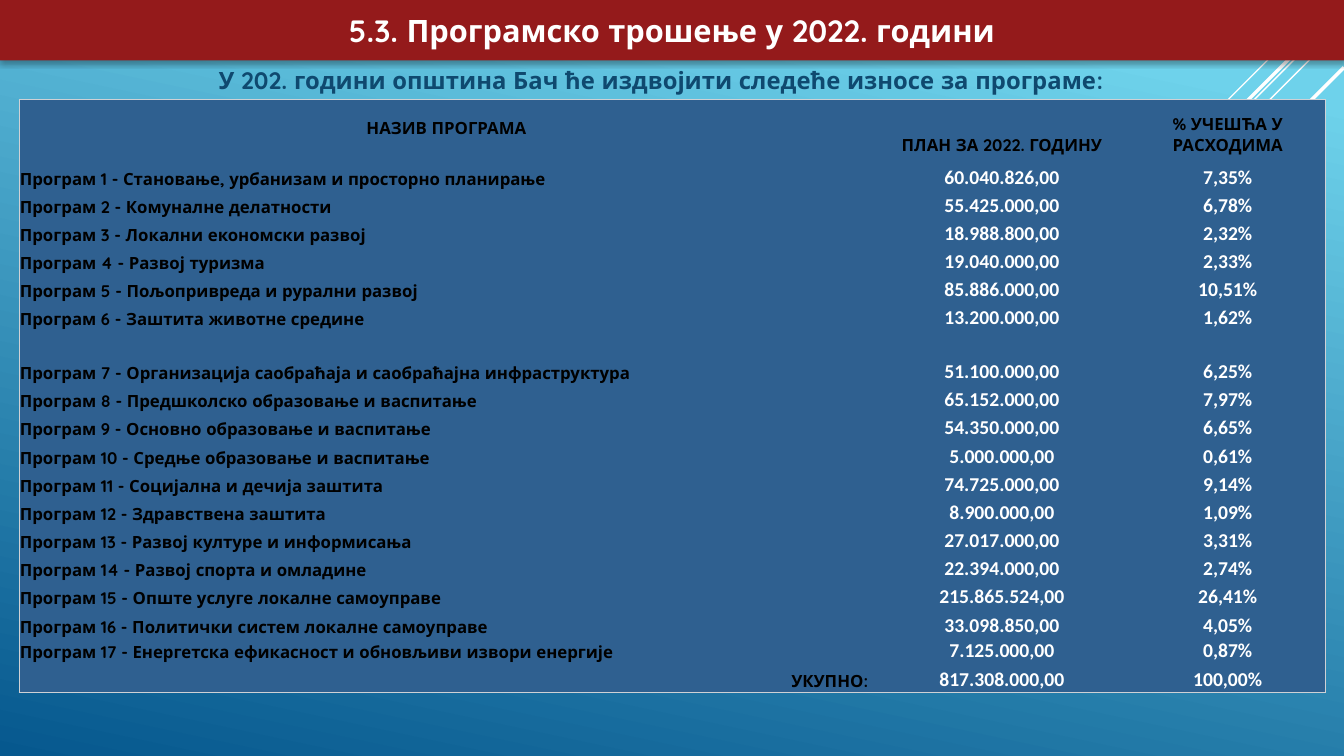
from dataclasses import dataclass

from lxml.etree import SubElement
from pptx import Presentation
from pptx.dml.color import RGBColor
from pptx.enum.shapes import MSO_CONNECTOR
from pptx.enum.text import MSO_ANCHOR, PP_ALIGN
from pptx.oxml import parse_xml
from pptx.oxml.ns import nsdecls, qn
from pptx.util import Cm, Pt


@dataclass(frozen=True)
class Theme:
    sky: str = "6ED2EB"
    deep: str = "06588E"
    banner: str = "941A1B"
    subtitle: str = "0F496F"
    table: str = "2F6090"
    border: str = "CFD1D5"
    light: str = "FFFFFF"
    dark: str = "000000"
    heading_font: str = "Quicksand"
    number_font: str = "Calibri"
    title_size: int = 22
    subtitle_size: int = 17
    label_size: int = 12
    number_size: int = 14


theme = Theme()


def write(frame, text, align, font, size, color):
    para = frame.paragraphs[0]
    para.alignment = align
    span = para.add_run()
    span.text = text
    span.font.name = font
    span.font.size = Pt(size)
    span.font.bold = True
    span.font.color.rgb = RGBColor.from_string(color)


def add_border(cell, side):
    cell.fill.background()
    properties = cell._tc.get_or_add_tcPr()
    border = parse_xml(
        f'<a:ln{side} {nsdecls("a")} w="9525"><a:solidFill><a:srgbClr val="{theme.border}">'
        f'<a:alpha val="60000"/></a:srgbClr></a:solidFill><a:prstDash val="solid"/></a:ln{side}>'
    )
    properties.insert(len(properties) - 1, border)


deck = Presentation()
deck.slide_width = Cm(33.87)
deck.slide_height = Cm(19.05)
page = deck.slides.add_slide(deck.slide_layouts[5])

backdrop = page.background.fill
backdrop.gradient()
backdrop.gradient_angle = 258
for stop, position, color in zip(backdrop.gradient_stops, (0.1, 1), (theme.sky, theme.deep)):
    stop.position = position
    stop.color.rgb = RGBColor.from_string(color)

rays = [
    (33.43, 0.03, 10.57, 1),
    (33.87, 0.25, 16.89, 1),
    (33.87, 0.64, 13.77, 1),
    (33.87, 0.1, 13.46, 2.5),
    (33.87, 1.7, 12.07, 2.5),
]
for x, y, reach, weight in rays:
    ray = page.shapes.add_connector(
        MSO_CONNECTOR.STRAIGHT, Cm(x), Cm(y), Cm(x - reach), Cm(y + reach)
    )
    ray.line.color.rgb = RGBColor.from_string(theme.light)
    ray.line.width = Pt(weight)
    SubElement(ray.element.spPr, qn("a:effectLst"))

subtitle = page.shapes.add_textbox(Cm(4.27), Cm(1.52), Cm(24.77), Cm(1.4))
subtitle.text_frame.word_wrap = True
write(
    subtitle.text_frame, "У 202. години општина Бач ће издвојити следеће износе за програме:",
    PP_ALIGN.CENTER, theme.heading_font, theme.subtitle_size, theme.subtitle,
)

banner = page.shapes.title
banner.left, banner.top, banner.width, banner.height = Cm(0), Cm(0), Cm(33.87), Cm(1.52)
banner.element.spPr.append(
    parse_xml(f'<a:prstGeom {nsdecls("a")} prst="roundRect"><a:avLst/></a:prstGeom>')
)
banner.fill.solid()
banner.fill.fore_color.rgb = RGBColor.from_string(theme.banner)
banner.line.fill.background()
banner.element.spPr.append(parse_xml(
    f'<a:effectLst {nsdecls("a")}><a:outerShdw blurRad="44450" dist="27940" dir="5400000" '
    f'rotWithShape="0"><a:srgbClr val="{theme.dark}"><a:alpha val="32000"/></a:srgbClr>'
    '</a:outerShdw></a:effectLst>'
))
banner.text_frame.vertical_anchor = MSO_ANCHOR.MIDDLE
write(
    banner.text_frame, "5.3. Програмско трошење у 2022. години",
    PP_ALIGN.CENTER, theme.heading_font, theme.title_size, theme.light,
)
banner.element.getparent().append(banner.element)

records = [
    ("НАЗИВ ПРОГРАМА", "ПЛАН ЗА 2022. ГОДИНУ", "% УЧЕШЋА У РАСХОДИМА"),
    ("Програм 1 - Становање, урбанизам и просторно планирање", "60.040.826,00", "7,35%"),
    ("Програм 2 - Комуналне делатности", "55.425.000,00", "6,78%"),
    ("Програм 3 - Локални економски развој", "18.988.800,00", "2,32%"),
    ("Програм 4 - Развој туризма", "19.040.000,00", "2,33%"),
    ("Програм 5 - Пољопривреда и рурални развој", "85.886.000,00", "10,51%"),
    ("Програм 6 - Заштита животне средине", "13.200.000,00", "1,62%"),
    ("Програм 7 - Организација саобраћаја и саобраћајна инфраструктура", "51.100.000,00", "6,25%"),
    ("Програм 8 - Предшколско образовање и васпитање", "65.152.000,00", "7,97%"),
    ("Програм 9 - Основно образовање и васпитање", "54.350.000,00", "6,65%"),
    ("Програм 10 - Средње образовање и васпитање", "5.000.000,00", "0,61%"),
    ("Програм 11 - Социјална и дечија заштита", "74.725.000,00", "9,14%"),
    ("Програм 12 - Здравствена заштита", "8.900.000,00", "1,09%"),
    ("Програм 13 - Развој културе и информисања", "27.017.000,00", "3,31%"),
    ("Програм 14 - Развој спорта и омладине", "22.394.000,00", "2,74%"),
    ("Програм 15 - Опште услуге локалне самоуправе", "215.865.524,00", "26,41%"),
    ("Програм 16 - Политички систем локалне самоуправе", "33.098.850,00", "4,05%"),
    ("Програм 17 - Енергетска ефикасност и обновљиви извори енергије", "7.125.000,00", "0,87%"),
    ("УКУПНО: ", "817.308.000,00", "100,00%"),
]
last_row = len(records) - 1
special_heights = {0: 1.42, 1: 0.84, 7: 1.35, 17: 0.64, last_row: 0.74}

table_frame = page.shapes.add_table(
    len(records), 3, Cm(0.48), Cm(2.51), Cm(32.92), Cm(14.94)
)
budget = table_frame.table
budget.first_row = False
budget.horz_banding = False
budget._tbl.tblPr.find(qn("a:tableStyleId")).text = "{2D5ABB26-0587-4C30-8999-92F81FD0307C}"
for column, width in zip(budget.columns, (21.54, 6.46, 4.92)):
    column.width = Cm(width)

for row, record in enumerate(records):
    budget.rows[row].height = Cm(special_heights.get(row, 0.71))
    for col, text in enumerate(record):
        cell = budget.cell(row, col)
        cell.margin_left = cell.margin_right = cell.margin_top = Cm(0.02)
        cell.margin_bottom = Cm(0)
        cell.vertical_anchor = MSO_ANCHOR.MIDDLE if row == col == 0 else MSO_ANCHOR.BOTTOM
        edges = {"L": col == 0, "R": col == 2, "T": row == 0, "B": row == last_row}
        for side, outer in edges.items():
            if outer:
                add_border(cell, side)
        cell.fill.solid()
        cell.fill.fore_color.rgb = RGBColor.from_string(theme.table)
        if row == 0 or col > 0:
            align = PP_ALIGN.CENTER
        else:
            align = PP_ALIGN.RIGHT if row == last_row else PP_ALIGN.LEFT
        if row == 0 or col == 0:
            style = (theme.heading_font, theme.label_size, theme.dark)
        else:
            style = (theme.number_font, theme.number_size, theme.light)
        write(cell.text_frame, text, align, *style)

deck.save("out.pptx")
